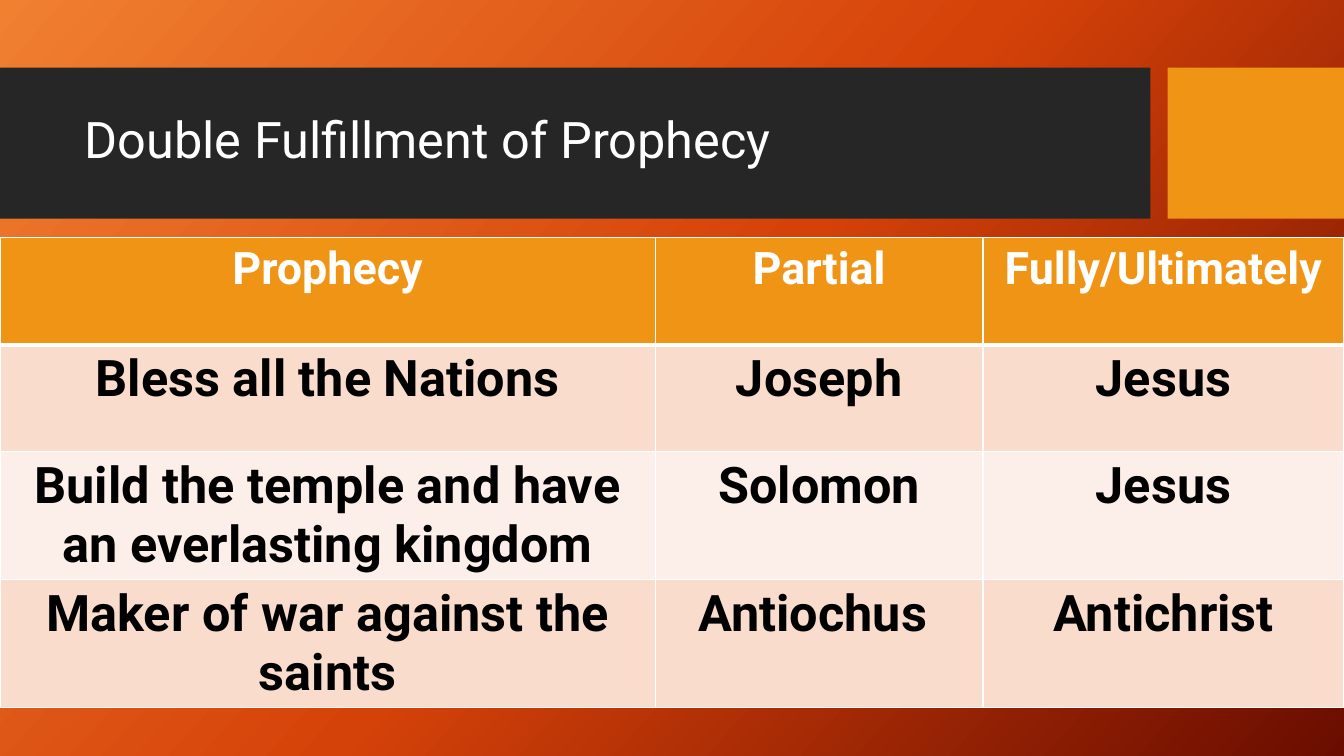
from copy import deepcopy

from lxml.etree import SubElement
from pptx import Presentation
from pptx.dml.color import RGBColor
from pptx.enum.shapes import MSO_SHAPE as Shape
from pptx.enum.text import MSO_ANCHOR as Anchor, MSO_AUTO_SIZE as AutoSize, PP_ALIGN as Align
from pptx.oxml.ns import qn
from pptx.util import Inches, Pt

WHITE = RGBColor(0xFF, 0xFF, 0xFF)
BLACK = RGBColor(0, 0, 0)
CHARCOAL = RGBColor(0x26, 0x26, 0x26)
AMBER = RGBColor(0xF0, 0x94, 0x15)
PEACH = RGBColor(0xF9, 0xDC, 0xCC)
BLUSH = RGBColor(0xFC, 0xEE, 0xE8)
BACKDROP = [(0, RGBColor(0xF1, 0x80, 0x31)),
            (0.5, RGBColor(0xD5, 0x42, 0x09)),
            (1, RGBColor(0x6A, 0x0D, 0x00))]

PROPHECIES = [
    ("Prophecy", "Partial", "Fully/Ultimately"),
    ("Bless all the Nations", "Joseph", "Jesus"),
    ("Build the temple and have an everlasting kingdom", "Solomon", "Jesus"),
    ("Maker of war against the saints", "Antiochus ", "Antichrist"),
]


class SlideBuilder:
    font = "Roboto"

    def __init__(self, slide):
        self.slide = slide

    def format_text(self, paragraph, size, color, align, bold=False):
        paragraph.alignment = align
        font = paragraph.runs[0].font
        for name, value in {"name": self.font, "size": Pt(size), "bold": bold}.items():
            setattr(font, name, value)
        font.color.rgb = color

    def background(self, stops, angle):
        fill = self.slide.background.fill
        fill.gradient()
        fill.gradient_angle = 360 - angle
        stop_list = self.slide.element.xpath(".//a:gsLst")[0]
        while len(stop_list) < len(stops):
            stop_list.append(deepcopy(stop_list[0]))
        for stop, (position, color) in zip(fill.gradient_stops, stops):
            stop.position = position
            stop.color.rgb = color

    def bar(self, left, top, width, height, color):
        bar = self.slide.shapes.add_shape(
            Shape.RECTANGLE, *map(Inches, (left, top, width, height)))
        bar.shadow.inherit = False
        bar.fill.solid()
        bar.fill.fore_color.rgb = color
        bar.line.fill.background()

    def title(self, text, left, top, width, height):
        title = self.slide.shapes.title
        box = {"left": left, "top": top, "width": width, "height": height}
        for name, value in box.items():
            setattr(title, name, Inches(value))
        frame = title.text_frame
        frame.text = text
        layout = {"vertical_anchor": Anchor.MIDDLE, "word_wrap": True,
                  "auto_size": AutoSize.NONE}
        for name, value in layout.items():
            setattr(frame, name, value)
        frame.paragraphs[0].line_spacing = 0.9
        self.format_text(frame.paragraphs[0], 36, WHITE, Align.LEFT)
        # Bring the title in front of the bars
        self.slide.shapes.element.append(title.element)

    def borders(self, cell, widths):
        properties = cell._tc.get_or_add_tcPr()
        for index, (side, width) in enumerate(widths.items()):
            line = SubElement(properties, qn(f"a:ln{side}"), w=str(Pt(width)))
            fill = SubElement(line, qn("a:solidFill"))
            SubElement(fill, qn("a:srgbClr"), val=str(WHITE))
            properties.insert(index, line)

    def table(self, rows, left, top, height, column_widths, row_height):
        graphic = self.slide.shapes.add_table(
            len(rows), len(column_widths), Inches(left), Inches(top),
            Inches(sum(column_widths)), Inches(height))
        table = graphic.table
        for column, width in zip(table.columns, column_widths):
            column.width = Inches(width)
        for row in table.rows:
            row.height = Inches(row_height)
        for r, texts in enumerate(rows):
            header = r == 0
            band = AMBER if header else (BLUSH, PEACH)[r % 2]
            for c, text in enumerate(texts):
                cell = table.cell(r, c)
                cell.text = text
                cell.fill.solid()
                cell.fill.fore_color.rgb = band
                self.format_text(cell.text_frame.paragraphs[0], 32 if header else 36,
                                 WHITE if header else BLACK, Align.CENTER, bold=True)
                self.borders(cell, {"L": 1, "R": 1, "T": 3 if r == 1 else 1,
                                    "B": 3 if header else 1})
        graphic.height = Inches(height)


def main():
    deck = Presentation()
    deck.slide_width, deck.slide_height = Inches(13.33), Inches(7.5)
    builder = SlideBuilder(deck.slides.add_slide(deck.slide_layouts[5]))

    # Backdrop and title band
    builder.background(BACKDROP, 42)
    builder.bar(0, 0.67, 11.41, 1.5, CHARCOAL)
    builder.bar(11.58, 0.67, 1.75, 1.5, AMBER)
    builder.title("Double Fulfillment of Prophecy", 0.74, 0.82, 10.51, 1.18)

    # Prophecies and their fulfillments
    builder.table(PROPHECIES, 0, 2.36, 4.73, (6.5, 3.25, 3.58), 1.06)

    deck.save("out.pptx")


if __name__ == "__main__":
    main()
